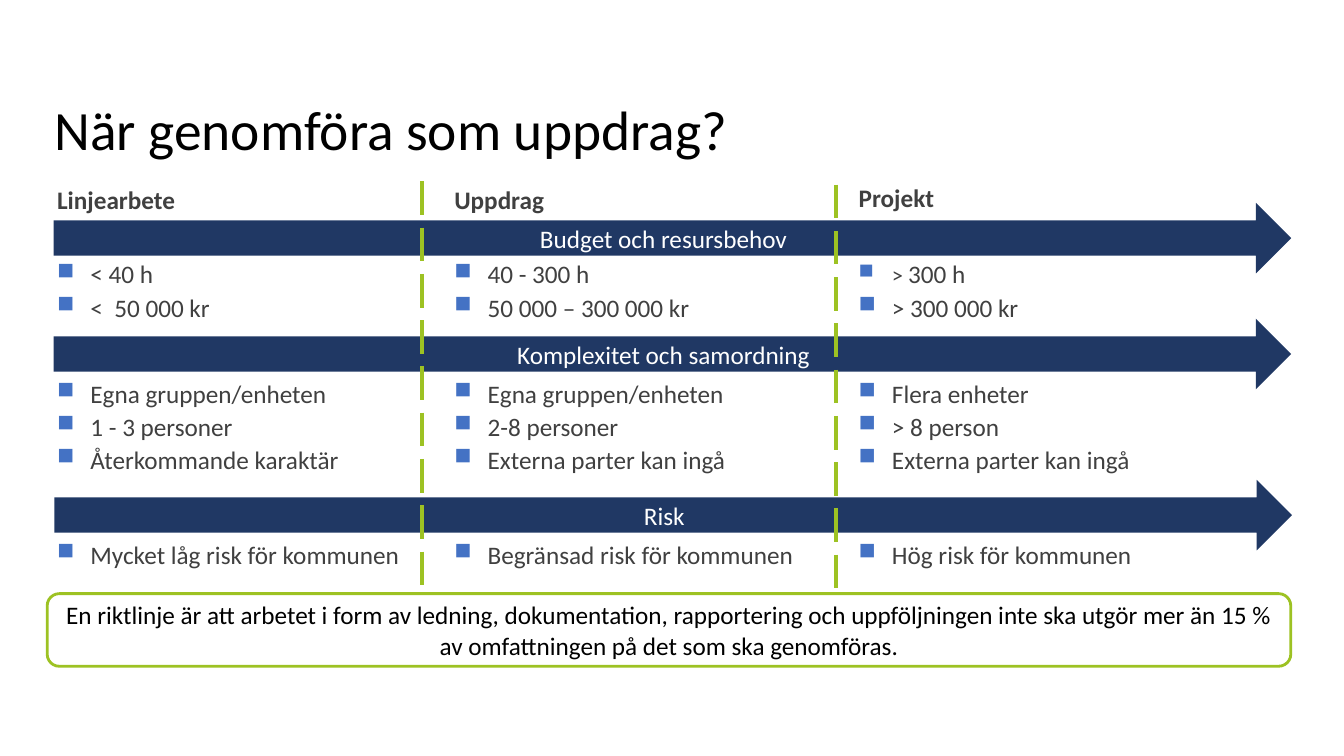
from lxml.etree import SubElement
from pptx import Presentation
from pptx.dml.color import RGBColor
from pptx.enum.dml import MSO_LINE_DASH_STYLE as Dash
from pptx.enum.shapes import MSO_CONNECTOR as Connector, MSO_SHAPE as Shape
from pptx.enum.text import MSO_ANCHOR as Anchor, MSO_AUTO_SIZE as AutoSize, PP_ALIGN as Align
from pptx.oxml.ns import qn
from pptx.util import Cm, Pt

COLORS = {
    "black": "000000",
    "white": "FFFFFF",
    "gray": "404040",
    "navy": "203864",
    "blue": "4472C4",
    "green": "9DC223",
}
FONT = "Calibri"
INDENT = Cm(0.84)
TITLE_ONLY = 5

# Columns: left edge, heading top, heading
COLUMNS = [
    (1.19, 4.45, "Linjearbete"),
    (11.2, 4.45, "Uppdrag"),
    (21.39, 4.39, "Projekt"),
]
COLUMN_WIDTH = 9.73

# Criteria: arrow left and top, list top and height, name, one list per column
CRITERIA = [
    (1.35, 5.11, 6.32, 1.85, "Budget och resursbehov", [
        ["< 40 h", "<  50 000 kr"],
        ["40 - 300 h", "50 000 – 300 000 kr"],
        [[("> ", 16), ("300 h", 18)], "> 300 000 kr"],
    ]),
    (1.35, 8.03, 9.32, 2.7, "Komplexitet och samordning", [
        ["Egna gruppen/enheten", "1 - 3 personer", "Återkommande karaktär"],
        ["Egna gruppen/enheten", "2-8 personer", "Externa parter kan ingå"],
        ["Flera enheter", "> 8 person", "Externa parter kan ingå"],
    ]),
    (1.37, 12.09, 13.39, 1, "Risk", [
        ["Mycket låg risk för kommunen"],
        ["Begränsad risk för kommunen"],
        ["Hög risk för kommunen"],
    ]),
]

# Dividers: x, top, bottom
DIVIDERS = [(10.64, 4.57, 14.78), (21.06, 4.65, 14.83)]

GUIDELINE = (
    "En riktlinje är att arbetet i form av ledning, dokumentation, rapportering och "
    "uppföljningen inte ska utgör mer än 15 % av omfattningen på det som ska genomföras."
)


def rgb(name):
    return RGBColor.from_string(COLORS[name])


def add_bullet(paragraph):
    properties = paragraph._p.get_or_add_pPr()
    properties.set("marL", str(INDENT))
    properties.set("indent", str(-INDENT))
    bullet_color = SubElement(properties, qn("a:buClr"))
    SubElement(bullet_color, qn("a:srgbClr"), val=COLORS["blue"])
    SubElement(properties, qn("a:buSzPct"), val="92000")
    SubElement(properties, qn("a:buChar"), char="■")


def write(frame, lines, size=18, color="gray", bold=False, align=Align.LEFT,
          anchor=Anchor.TOP, spacing=1.0, bullets=False):
    """Fill a frame; a line is a string or a list of (text, size) parts."""
    frame.word_wrap = True
    frame.auto_size = AutoSize.NONE
    frame.vertical_anchor = anchor
    for number, line in enumerate(lines):
        paragraph = frame.add_paragraph() if number else frame.paragraphs[0]
        if bullets:
            add_bullet(paragraph)
        paragraph.alignment = align
        paragraph.line_spacing = spacing
        parts = [(line, size)] if isinstance(line, str) else line
        for text, part_size in parts:
            run = paragraph.add_run()
            run.text = text
            run.font.name = FONT
            run.font.size = Pt(part_size)
            run.font.bold = bold
            run.font.color.rgb = rgb(color)


def add_title(slide, text):
    title = slide.shapes.title
    title.left, title.top, title.width, title.height = Cm(1.12), Cm(2.39), Cm(28.63), Cm(1.88)
    write(title.text_frame, [text], size=39.6, color="black", anchor=Anchor.MIDDLE, spacing=0.9)


def add_text(slide, left, top, height, lines, **style):
    box = slide.shapes.add_textbox(Cm(left), Cm(top), Cm(COLUMN_WIDTH), Cm(height))
    write(box.text_frame, lines, spacing=1.1, **style)


def add_arrow(slide, left, top, name):
    arrow = slide.shapes.add_shape(Shape.RIGHT_ARROW, Cm(left), Cm(top), Cm(31.19), Cm(1.78))
    arrow.shadow.inherit = False
    arrow.fill.solid()
    arrow.fill.fore_color.rgb = rgb("navy")
    arrow.line.fill.background()
    write(arrow.text_frame, [name], color="white", align=Align.CENTER, anchor=Anchor.MIDDLE)


def add_divider(slide, x, top, bottom):
    divider = slide.shapes.add_connector(Connector.STRAIGHT, Cm(x), Cm(top), Cm(x), Cm(bottom))
    divider.line.color.rgb = rgb("green")
    divider.line.width = Pt(3)
    divider.line.dash_style = Dash.LONG_DASH
    SubElement(divider._element.spPr, qn("a:effectLst"))


def add_guideline(slide, text):
    frame = slide.shapes.add_shape(
        Shape.ROUNDED_RECTANGLE, Cm(1.19), Cm(14.96), Cm(31.34), Cm(1.83))
    frame.shadow.inherit = False
    frame.fill.background()
    frame.line.color.rgb = rgb("green")
    frame.line.width = Pt(2)
    write(frame.text_frame, [text], color="black", align=Align.CENTER, anchor=Anchor.MIDDLE)


def main():
    deck = Presentation()
    deck.slide_width, deck.slide_height = Cm(33.87), Cm(19.05)
    slide = deck.slides.add_slide(deck.slide_layouts[TITLE_ONLY])

    add_title(slide, "När genomföra som uppdrag?")

    # Column headings
    for left, heading_top, heading in COLUMNS:
        add_text(slide, left, heading_top, 1.07, [heading], bold=True)

    # Criteria arrows with their lists
    for arrow_left, arrow_top, list_top, list_height, name, lists in CRITERIA:
        add_arrow(slide, arrow_left, arrow_top, name)
        for (left, _, _), items in zip(COLUMNS, lists):
            add_text(slide, left, list_top, list_height, items, bullets=True)

    # Column dividers
    for x, top, bottom in DIVIDERS:
        add_divider(slide, x, top, bottom)

    add_guideline(slide, GUIDELINE)
    deck.save("out.pptx")


if __name__ == "__main__":
    main()
